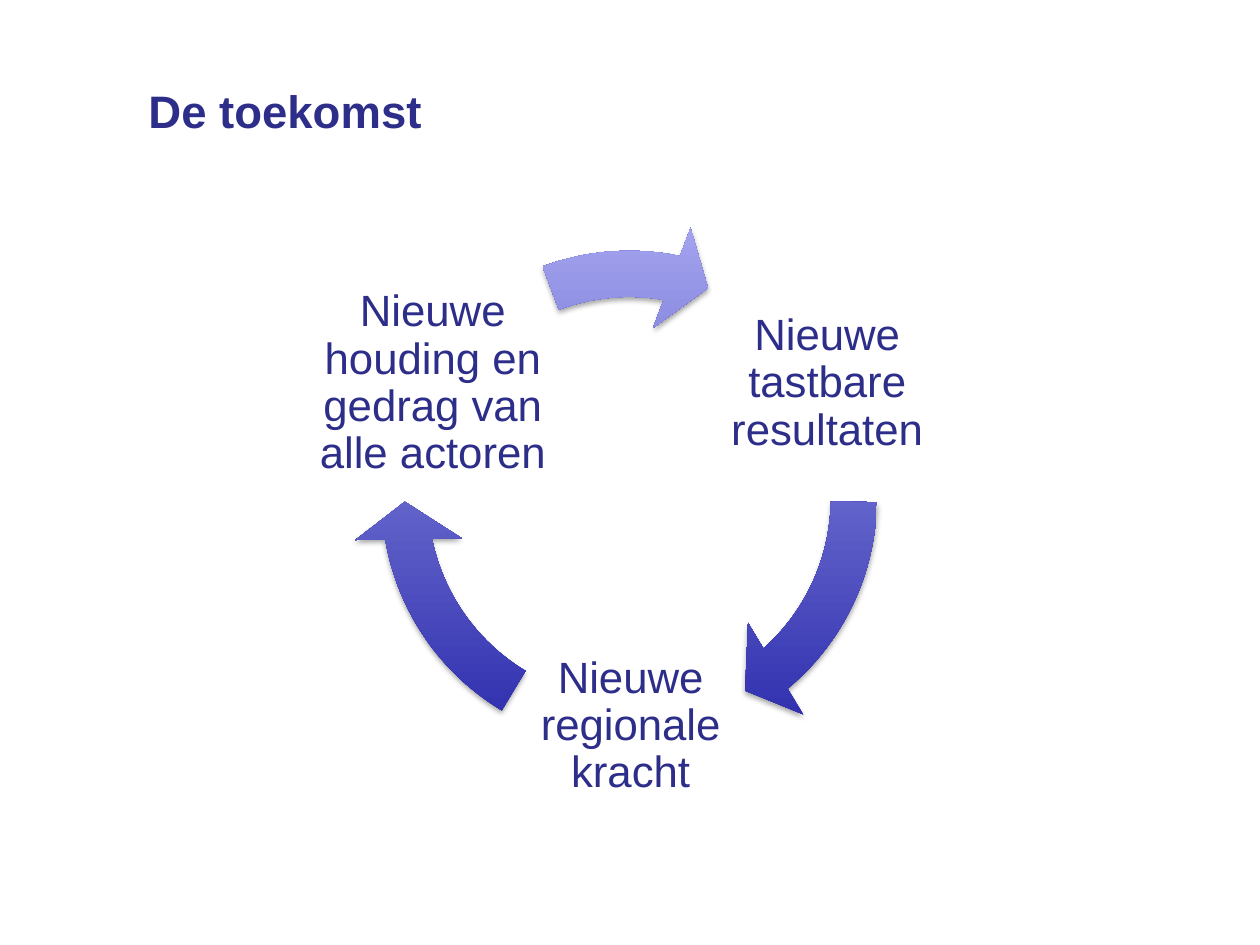
import lxml.etree
import pptx
import pptx.dml.color
import pptx.enum.shapes
import pptx.enum.text
import pptx.oxml.ns
import pptx.util

Inches = pptx.util.Inches
Pt = pptx.util.Pt
qn = pptx.oxml.ns.qn

NAVY = "2D2D8A"
DARK_BLUE = "2424A8"
LIGHT_BLUE = "A4A4EF"
STEP_SIZE = 1.87
RING = (2.79, 1.75, 4.41, 4.41)

# text, left, top of each step
STEPS = [
    ("Nieuwe tastbare resultaten", 5.63, 2.11),
    ("Nieuwe regionale kracht", 4.07, 4.83),
    ("Nieuwe houding en gedrag van alle actoren", 2.5, 2.11),
]
# start and end of each arrow in degrees, clockwise from the right
ARROW_ANGLES = [(0.89, 49.36), (121.03, 169.5), (249.48, 280.91)]


def rgb(hex_colour):
    return pptx.dml.color.RGBColor.from_string(hex_colour)


def angle_adjustment(degrees):
    """Turn degrees into the preset's 60000ths, which python-pptx scales by 100000."""
    return degrees * 60000 / 100000


def add_text(slide, text, box, size, bold=False, align=None, inset=None, line_spacing=None):
    frame = slide.shapes.add_textbox(*map(Inches, box)).text_frame
    frame.word_wrap = True
    frame.vertical_anchor = pptx.enum.text.MSO_ANCHOR.MIDDLE
    if inset is not None:
        frame.margin_left = frame.margin_right = Inches(inset)
        frame.margin_top = frame.margin_bottom = Inches(inset)
    paragraph = frame.paragraphs[0]
    paragraph.alignment = align
    paragraph.line_spacing = line_spacing
    run = paragraph.add_run()
    run.text = text
    run.font.name = "Arial"
    run.font.size = Pt(size)
    run.font.bold = bold
    run.font.color.rgb = rgb(NAVY)


def add_soft_shadow(shape):
    shape.shadow.inherit = False
    effects = shape._element.spPr.find(qn("a:effectLst"))
    shadow = lxml.etree.SubElement(
        effects, qn("a:outerShdw"), blurRad=str(Pt(3.1)), dist=str(Pt(1.8)),
        dir="5400000", rotWithShape="0")
    colour = lxml.etree.SubElement(shadow, qn("a:srgbClr"), val="000000")
    lxml.etree.SubElement(colour, qn("a:alpha"), val="35000")


def add_cycle_arrow(slide, start, end):
    arrow = slide.shapes.add_shape(
        pptx.enum.shapes.MSO_SHAPE.CIRCULAR_ARROW, *map(Inches, RING))
    adjustments = (0.083, angle_adjustment(9.61), angle_adjustment(end),
                   angle_adjustment(start), 0.096)
    for index, value in enumerate(adjustments):
        arrow.adjustments[index] = value
    arrow.fill.gradient()
    arrow.fill.gradient_angle = 90
    stops = arrow.fill.gradient_stops
    for stop, position, colour in zip(stops, (0, 1), (DARK_BLUE, LIGHT_BLUE)):
        stop.position = position
        stop.color.rgb = rgb(colour)
    arrow.line.fill.background()
    add_soft_shadow(arrow)


def main():
    presentation = pptx.Presentation()
    presentation.slide_width = Inches(10)
    presentation.slide_height = Inches(7.5)
    slide = presentation.slides.add_slide(presentation.slide_layouts[6])

    add_text(slide, "De toekomst", (1.08, 0.25, 7.88, 1.25), 26, bold=True)
    for (text, left, top), (start, end) in zip(STEPS, ARROW_ANGLES):
        add_text(slide, text, (left, top, STEP_SIZE, STEP_SIZE), 25,
                 align=pptx.enum.text.PP_ALIGN.CENTER, inset=0.03, line_spacing=0.9)
        add_cycle_arrow(slide, start, end)

    presentation.save("out.pptx")


if __name__ == "__main__":
    main()
